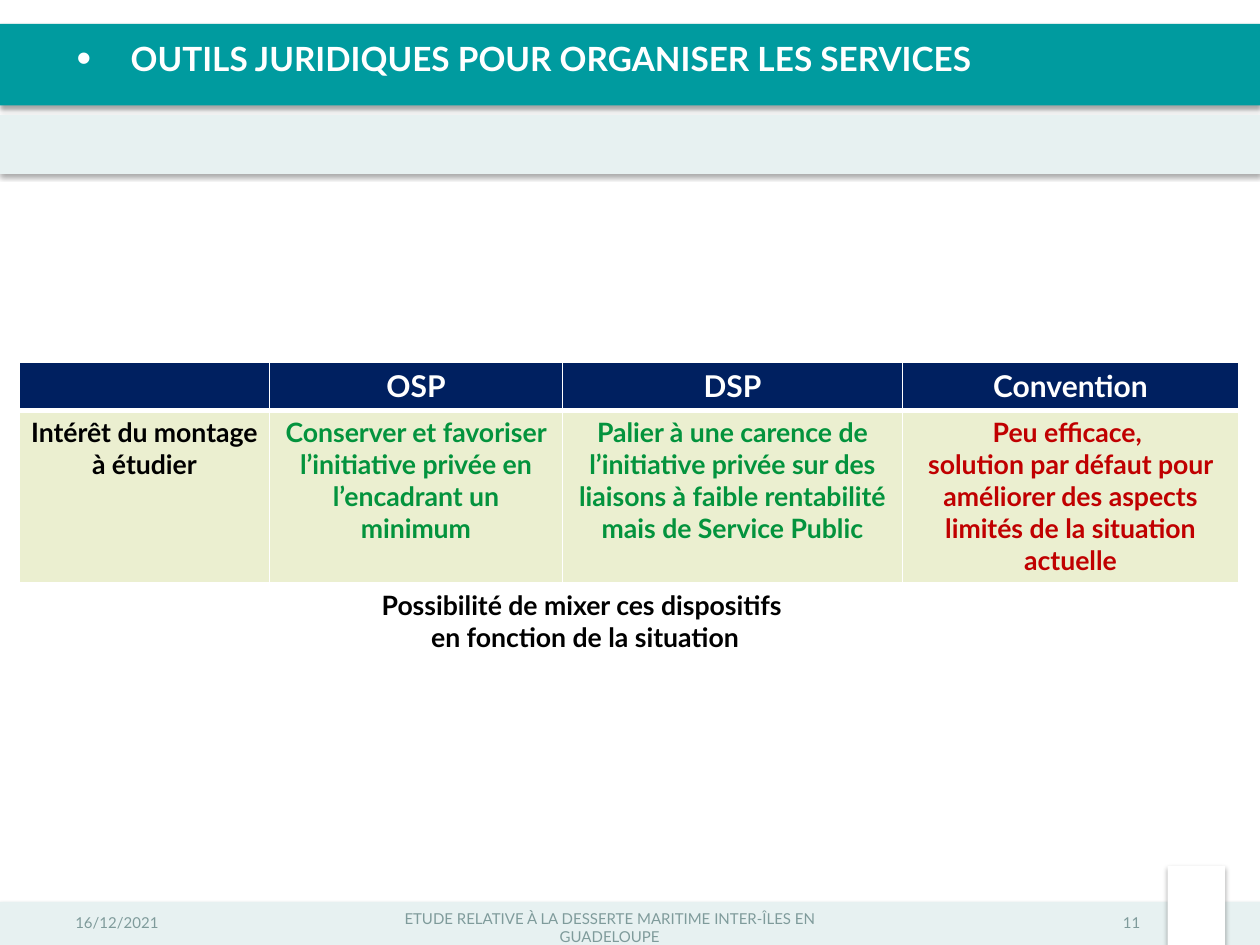
from lxml import etree
from pptx import Presentation
from pptx.dml.color import RGBColor
from pptx.enum.shapes import MSO_SHAPE
from pptx.enum.text import MSO_ANCHOR, PP_ALIGN
from pptx.oxml import parse_xml
from pptx.oxml.ns import nsdecls, qn
from pptx.util import Inches, Pt

RECTANGLE = MSO_SHAPE.RECTANGLE
LEFT, CENTER, RIGHT = PP_ALIGN.LEFT, PP_ALIGN.CENTER, PP_ALIGN.RIGHT
TOP, MIDDLE = MSO_ANCHOR.TOP, MSO_ANCHOR.MIDDLE

SLIDE_WIDTH, SLIDE_HEIGHT = Inches(10.51), Inches(7.88)
FONT = "Lato"
TITLE_ONLY = 5

WHITE = RGBColor(0xFF, 0xFF, 0xFF)
BLACK = RGBColor(0, 0, 0)
TEAL = RGBColor(0x00, 0x9B, 0x9F)
PALE = RGBColor(0xE7, 0xF1, 0xF1)
GREY = RGBColor(0x7F, 0x9B, 0x9B)
NAVY = RGBColor(0x00, 0x20, 0x60)
CREAM = RGBColor(0xEB, 0xEF, 0xD0)
GREEN = RGBColor(0x03, 0x93, 0x3D)
RED = RGBColor(0xC0, 0x00, 0x00)

# Positions are percentages of the slide: left, top, width, height
BANDS = [
    ((0, 95.43, 100, 4.57), PALE),
    ((0, 2.54, 100, 8.63), TEAL),
    ((0, 12.18, 100, 6.22), PALE),
    ((92.67, 91.62, 4.57, 8.38), WHITE),
]
FOOTERS = [
    ((29.97, 96.57, 36.82, 3.17), CENTER,
     "ETUDE RELATIVE À LA DESSERTE MARITIME INTER-ÎLES EN GUADELOUPE"),
    ((5.04, 96.57, 22.45, 2.03), LEFT, "16/12/2021"),
    ((68.98, 96.57, 22.45, 2.03), RIGHT, "11"),
]
COLUMN_SHARES = [19.89, 23.22, 27.02, 26.64]
ROW_SHARES = [5.14, 17.9]
HEADERS = ["", "OSP", "DSP", "Convention"]
INTERESTS = [
    ("Intérêt du montage à étudier", BLACK),
    ("Conserver et favoriser l’initiative privée en l’encadrant un minimum", GREEN),
    ("Palier à une carence de l’initiative privée sur des liaisons à faible "
     "rentabilité mais de Service Public", GREEN),
    ("Peu efficace, \nsolution par défaut pour améliorer des aspects limités "
     "de la situation actuelle", RED),
]
THIN, THICK = Pt(0.96), Pt(3)


def across(share):
    return round(SLIDE_WIDTH * share / 100)


def down(share):
    return round(SLIDE_HEIGHT * share / 100)


def box(shares):
    left, top, width, height = shares
    return across(left), down(top), across(width), down(height)


def write(text_frame, text, size, color, bold=True, align=CENTER):
    paragraph = text_frame.paragraphs[0]
    paragraph.text = text
    paragraph.alignment = align
    font_format = {"name": FONT, "size": Pt(size), "bold": bold}
    for run in paragraph.runs:
        for name, value in font_format.items():
            setattr(run.font, name, value)
        run.font.color.rgb = color
    return paragraph


def set_frame(text_frame, anchor, side=0.1, edge=0.05):
    frame_format = {
        "word_wrap": True, "vertical_anchor": anchor,
        "margin_left": Inches(side), "margin_right": Inches(side),
        "margin_top": Inches(edge), "margin_bottom": Inches(edge),
    }
    for name, value in frame_format.items():
        setattr(text_frame, name, value)


def add_band(slide, shares, color):
    shape = slide.shapes.add_shape(RECTANGLE, *box(shares))
    shape.fill.solid()
    shape.fill.fore_color.rgb = color
    shape.line.fill.background()
    # Soft shadow straight below the band
    shape._element.spPr.append(parse_xml(
        f'<a:effectLst {nsdecls("a")}>'
        f'<a:outerShdw blurRad="{Pt(3.1)}" dist="{Pt(1.8)}" dir="5400000" rotWithShape="0">'
        '<a:srgbClr val="000000"><a:alpha val="35000"/></a:srgbClr>'
        '</a:outerShdw></a:effectLst>'))


def add_title(slide, text):
    title = slide.shapes.title
    title.left, title.top, title.width, title.height = box((5.04, 3.3, 93.91, 6.22))
    set_frame(title.text_frame, TOP, 0.11, 0.06)
    paragraph = write(title.text_frame, text, 20, WHITE, align=LEFT)
    # Bullet with a hanging indent
    properties = paragraph._p.get_or_add_pPr()
    properties.set("marL", str(Inches(0.45)))
    properties.set("indent", str(-Inches(0.45)))
    bullet = {"buSzPct": ("val", "125000"), "buFont": ("typeface", "Arial"),
              "buChar": ("char", "•")}
    for tag, (name, value) in bullet.items():
        etree.SubElement(properties, qn(f"a:{tag}")).set(name, value)
    # Bring the title in front of the bands
    slide.shapes._spTree.append(title._element)


def add_text(slide, shares, text, size, color, bold, align, anchor):
    text_frame = slide.shapes.add_textbox(*box(shares)).text_frame
    set_frame(text_frame, anchor)
    write(text_frame, text, size, color, bold, align)


def format_cell(cell, text, size, color, fill, top, bottom):
    properties = cell._tc.get_or_add_tcPr()
    borders = {"lnL": THIN, "lnR": THIN, "lnT": top, "lnB": bottom}
    for tag, width in borders.items():
        properties.append(parse_xml(
            f'<a:{tag} {nsdecls("a")} w="{width}"><a:solidFill>'
            f'<a:srgbClr val="{WHITE}"/></a:solidFill></a:{tag}>'))
    cell.fill.solid()
    cell.fill.fore_color.rgb = fill
    write(cell.text_frame, text, size, color)


def add_comparison(slide):
    position = box((1.52, 38.32, sum(COLUMN_SHARES), sum(ROW_SHARES)))
    table = slide.shapes.add_table(
        len(ROW_SHARES), len(COLUMN_SHARES), *position).table
    for column, share in zip(table.columns, COLUMN_SHARES):
        column.width = across(share)
    for row, share in zip(table.rows, ROW_SHARES):
        row.height = down(share)
    for index, (header, (interest, color)) in enumerate(zip(HEADERS, INTERESTS)):
        format_cell(table.cell(0, index), header, 18, WHITE, NAVY, THIN, THICK)
        format_cell(table.cell(1, index), interest, 16, color, CREAM, THICK, THIN)


def main():
    presentation = Presentation()
    presentation.slide_width = SLIDE_WIDTH
    presentation.slide_height = SLIDE_HEIGHT
    slide = presentation.slides.add_slide(presentation.slide_layouts[TITLE_ONLY])

    # Bands and title
    for shares, color in BANDS:
        add_band(slide, shares, color)
    add_title(slide, "OUTILS JURIDIQUES POUR ORGANISER LES SERVICES")

    # Footer
    for shares, align, text in FOOTERS:
        add_text(slide, shares, text, 9, GREY, False, align, MIDDLE)

    # Comparison of the legal tools, with its conclusion
    add_comparison(slide)
    add_text(slide, (21.41, 61.68, 50.05, 8.12),
             "Possibilité de mixer ces dispositifs \nen fonction de la situation",
             16, BLACK, True, CENTER, TOP)

    presentation.save("out.pptx")


if __name__ == "__main__":
    main()
